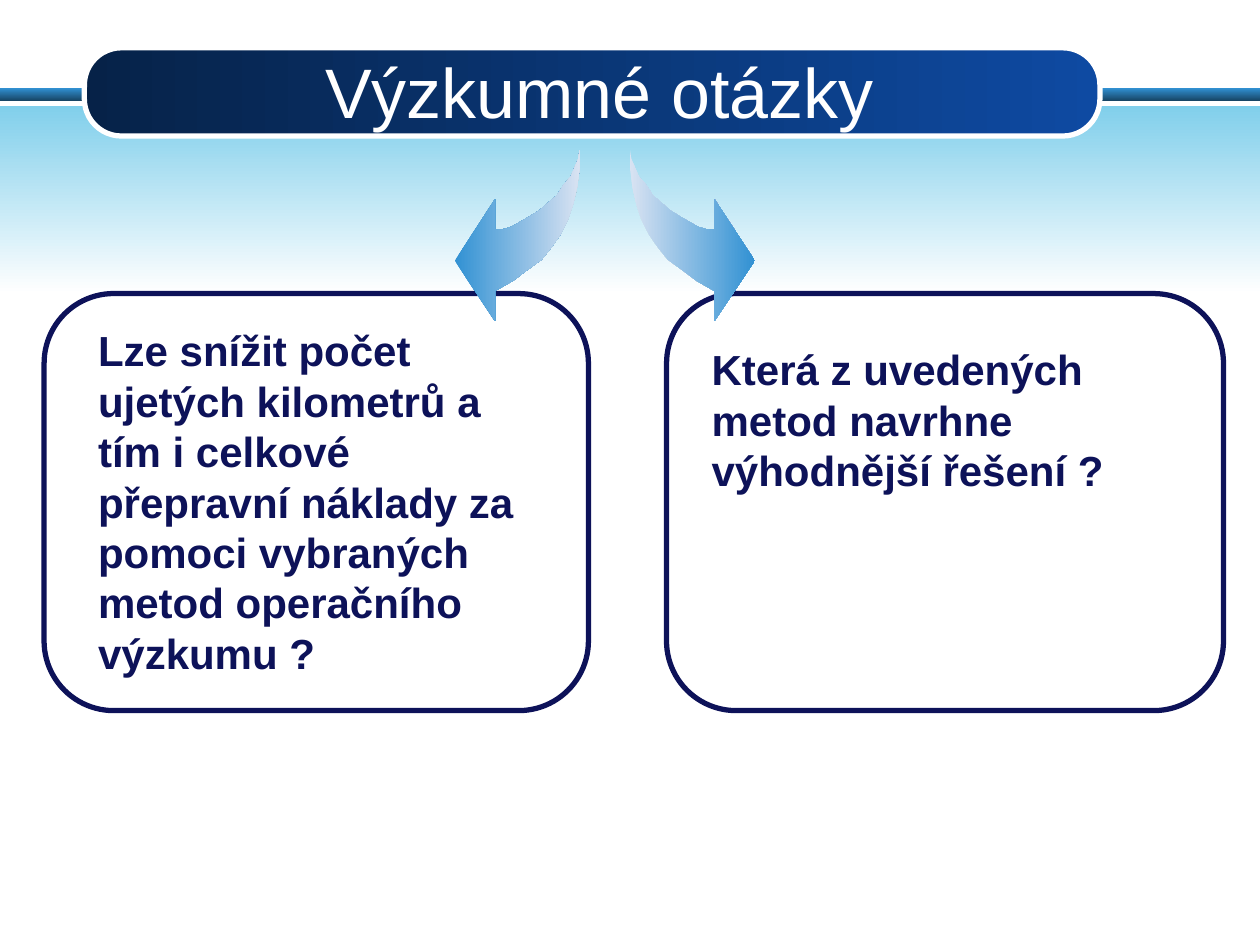
from dataclasses import dataclass

from pptx import Presentation
from pptx.dml.color import RGBColor
from pptx.enum import shapes, text
from pptx.util import Inches, Pt

WHITE = RGBColor(0xFF, 0xFF, 0xFF)
NAVY = RGBColor(0x0D, 0x12, 0x59)
BLUE = RGBColor(0x31, 0x91, 0xD3)
STEEL = RGBColor(0x17, 0x45, 0x65)
SKY = RGBColor(0x81, 0xCF, 0xEB)
PALE = RGBColor(0xD9, 0xE3, 0xF2)
TITLE_DARK = RGBColor(0x06, 0x22, 0x48)
TITLE_LIGHT = RGBColor(0x0E, 0x4A, 0xA2)

RIGHTWARD, DOWNWARD = 0, 270
UNITS_PER_INCH = 100
MIRROR_SUM = 960  # left x + right x of a mirrored pair of points

# Right-hand arrow outline, in hundredths of an inch
ARROW_POINTS = [
    (500, 119), (500, 134), (502, 149), (505, 162), (509, 174), (515, 186),
    (522, 196), (530, 206), (541, 214), (553, 223), (567, 231), (567, 255),
    (599, 207), (567, 158), (567, 182), (561, 182), (554, 180), (547, 176),
    (540, 172), (532, 167), (525, 161), (518, 155), (513, 147), (507, 140),
    (504, 133), (501, 126),
]


@dataclass(frozen=True)
class Box:
    left: float
    top: float
    width: float
    height: float

    def lengths(self):
        return [Inches(value) for value in (self.left, self.top, self.width, self.height)]


@dataclass(frozen=True)
class Question:
    frame: Box
    text_box: Box
    wording: str


QUESTIONS = [
    Question(Box(5.29, 2.33, 4.42, 3.31), Box(5.55, 2.68, 4.16, 1.31),
             "Která z uvedených metod navrhne výhodnější řešení ?"),
    Question(Box(0.35, 2.33, 4.32, 3.31), Box(0.68, 2.53, 3.69, 2.93),
             "Lze snížit počet ujetých kilometrů a tím i celkové přepravní "
             "náklady za pomoci vybraných metod operačního výzkumu ?"),
]


def fill_gradient(shape, start: RGBColor, end: RGBColor, angle: int) -> None:
    shape.fill.gradient()
    shape.fill.gradient_angle = angle
    for stop, color, position in zip(shape.fill.gradient_stops, (start, end), (0, 1)):
        stop.color.rgb = color
        stop.position = position


def add_band(slide, box: Box, start: RGBColor, end: RGBColor) -> None:
    band = slide.shapes.add_shape(shapes.MSO_SHAPE.RECTANGLE, *box.lengths())
    band.shadow.inherit = False
    fill_gradient(band, start, end, DOWNWARD)
    band.line.fill.background()


def add_rounded_box(slide, box: Box, line_color: RGBColor, rounding: float):
    """Add an unfilled rounded rectangle with a 3 pt outline."""
    shape = slide.shapes.add_shape(shapes.MSO_SHAPE.ROUNDED_RECTANGLE, *box.lengths())
    shape.shadow.inherit = False
    shape.adjustments[0] = rounding
    shape.fill.background()
    shape.line.color.rgb = line_color
    shape.line.width = Pt(3)
    return shape


def add_text(slide, box: Box, wording: str, size: int, color: RGBColor, bold: bool = False):
    frame = slide.shapes.add_textbox(*box.lengths()).text_frame
    frame.word_wrap = True
    paragraph = frame.paragraphs[0]
    paragraph.text = wording
    paragraph.font.name = "Arial"
    paragraph.font.size = Pt(size)
    paragraph.font.bold = bold
    paragraph.font.color.rgb = color
    return frame


def add_title(slide) -> None:
    plate = add_rounded_box(slide, Box(0.67, 0.38, 8.06, 0.7), WHITE, 0.42)
    fill_gradient(plate, TITLE_DARK, TITLE_LIGHT, RIGHTWARD)
    frame = add_text(slide, Box(0.92, 0.41, 7.67, 0.62), "Výzkumné otázky", 40, WHITE)
    frame.vertical_anchor = text.MSO_ANCHOR.MIDDLE
    frame.paragraphs[0].alignment = text.PP_ALIGN.CENTER


def add_arrow(slide, points, start: RGBColor, end: RGBColor) -> None:
    builder = slide.shapes.build_freeform(*points[0], scale=Inches(1) / UNITS_PER_INCH)
    builder.add_line_segments(points[1:], close=True)
    arrow = builder.convert_to_shape()
    arrow.shadow.inherit = False
    fill_gradient(arrow, start, end, RIGHTWARD)
    arrow.line.fill.background()


def main() -> None:
    presentation = Presentation()
    presentation.slide_width, presentation.slide_height = Inches(10), Inches(7.5)
    slide = presentation.slides.add_slide(presentation.slide_layouts[6])

    add_band(slide, Box(0, 0.7, 10, 0.1), BLUE, STEEL)
    add_band(slide, Box(0, 0.84, 10, 1.49), SKY, WHITE)
    add_title(slide)
    for question in QUESTIONS:
        add_rounded_box(slide, question.frame, NAVY, 0.167)
        add_text(slide, question.text_box, question.wording, 24, NAVY, bold=True)
    add_arrow(slide, [(MIRROR_SUM - x, y) for x, y in ARROW_POINTS], BLUE, PALE)
    add_arrow(slide, ARROW_POINTS, PALE, BLUE)

    presentation.save("out.pptx")


if __name__ == "__main__":
    main()
